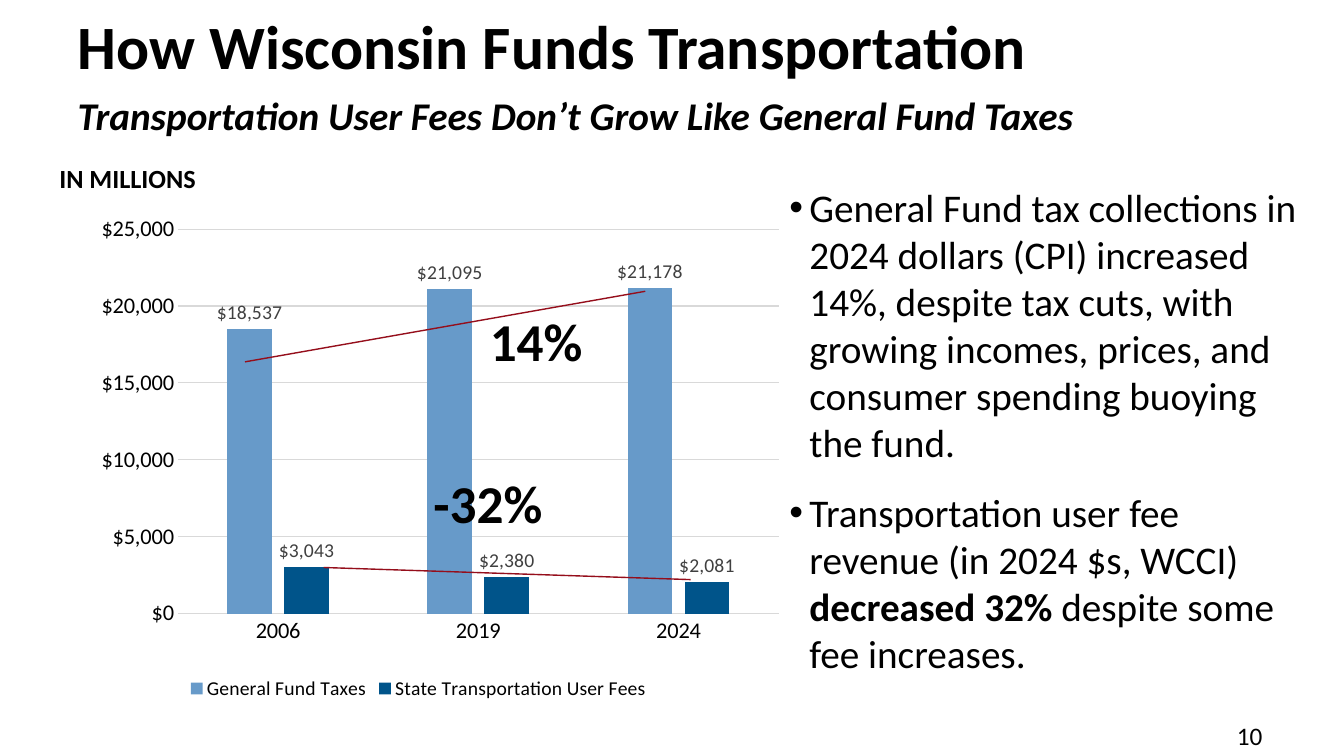
from lxml import etree
from pptx import Presentation
from pptx.chart.data import CategoryChartData
from pptx.dml.color import RGBColor
from pptx.enum.chart import XL_CHART_TYPE as ChartType
from pptx.enum.chart import XL_LABEL_POSITION as LabelPosition
from pptx.enum.chart import XL_LEGEND_POSITION as LegendPosition
from pptx.enum.chart import XL_TICK_MARK as TickMark
from pptx.enum.shapes import MSO_CONNECTOR, MSO_SHAPE
from pptx.enum.text import MSO_ANCHOR, MSO_AUTO_SIZE, PP_ALIGN
from pptx.oxml import parse_xml
from pptx.oxml.ns import nsdecls, qn
from pptx.util import Inches, Pt

FONT = "Calibri"
BLACK = RGBColor(0x00, 0x00, 0x00)
WHITE = RGBColor(0xFF, 0xFF, 0xFF)
LABEL_GRAY = RGBColor(0x40, 0x40, 0x40)
GRID_GRAY = RGBColor(0xD9, 0xD9, 0xD9)
LIGHT_BLUE = RGBColor(0x67, 0x9A, 0xC9)
DARK_BLUE = RGBColor(0x00, 0x54, 0x8A)
TREND_RED = RGBColor(0x95, 0x0E, 0x1B)

TITLE = "How Wisconsin Funds Transportation"
SUBTITLE = "Transportation User Fees Don’t Grow Like General Fund Taxes"
UNIT = "IN MILLIONS"
YEARS = ["2006", "2019", "2024"]
SERIES = [
    ("General Fund Taxes", (18537, 21095, 21178), LIGHT_BLUE),
    ("State Transportation User Fees", (3043, 2380, 2081), DARK_BLUE),
]
DOLLARS = '"$"#,##0'
PLOT_AREA = {"x": 0.167, "y": 0.053, "w": 0.832, "h": 0.766}
BULLETS = [
    [("General Fund tax collections in 2024 dollars (CPI) increased 14%, despite tax "
      "cuts, with growing incomes, prices, and consumer spending buoying the fund.", False)],
    [("Transportation user fee revenue (in 2024 $s, WCCI) ", False),
     ("decreased 32% ", True),
     ("despite some fee increases.", False)],
]
CALLOUTS = [
    ("-32%", (4.2, 4.62, 1.38, 0.74), 38, True),
    ("14%", (4.76, 3.01, 1.64, 0.74), 38, True),
    ("10", (12.17, 7.1, 1, 0.4), 18, False),
]
TREND_LINES = [(2.43, 3.59, 6.4, 2.89), (3.21, 5.63, 6.85, 5.75)]


def inches(values):
    """Convert a sequence of numbers to lengths."""
    return [Inches(value) for value in values]


def style_font(font, size, color=BLACK, bold=False, italic=False):
    """Apply the slide typeface to a font."""
    font.name = FONT
    font.size = Pt(size)
    font.color.rgb = color
    font.bold = bold
    font.italic = italic


def write_text(paragraph, text, **style):
    """Add a formatted run to a paragraph."""
    run = paragraph.add_run()
    run.text = text
    style_font(run.font, **style)


def add_text_box(slide, box):
    """Add a wrapping text box and return its text frame."""
    frame = slide.shapes.add_textbox(*inches(box)).text_frame
    frame.word_wrap = True
    frame.auto_size = MSO_AUTO_SIZE.SHAPE_TO_FIT_TEXT
    return frame


def add_title(slide):
    """Fill the title placeholder with title and subtitle."""
    title = slide.shapes.title
    title.left, title.top, title.width, title.height = inches((0.67, 0.19, 12, 1.25))
    frame = title.text_frame
    frame.auto_size = MSO_AUTO_SIZE.NONE
    frame.vertical_anchor = MSO_ANCHOR.MIDDLE
    paragraph = frame.paragraphs[0]
    paragraph.alignment = PP_ALIGN.LEFT
    paragraph.line_spacing = Pt(40)
    write_text(paragraph, TITLE, size=44, bold=True)
    paragraph.add_line_break()
    write_text(paragraph, SUBTITLE, size=28, bold=True, italic=True)


def set_plot_area(chart):
    """Fix the inner plot area as fractions of the chart."""
    plot_area = chart._chartSpace.find(f".//{qn('c:plotArea')}")
    for layout in plot_area.findall(qn("c:layout")):
        plot_area.remove(layout)
    layout = parse_xml(f"<c:layout {nsdecls('c')}><c:manualLayout/></c:layout>")
    settings = {"layoutTarget": "inner", "xMode": "edge", "yMode": "edge", **PLOT_AREA}
    for name, value in settings.items():
        etree.SubElement(layout[0], qn(f"c:{name}")).set("val", str(value))
    plot_area.insert(0, layout)


def add_revenue_chart(slide):
    """Add the clustered columns of taxes and fees."""
    data = CategoryChartData(number_format=DOLLARS)
    data.categories = YEARS
    for name, values, _ in SERIES:
        data.add_series(name, values)
    chart = slide.shapes.add_chart(
        ChartType.COLUMN_CLUSTERED, *inches((0.57, 2.01, 7.16, 4.98)), data).chart
    style_font(chart.font, 10)
    chart.has_title = False
    chart.has_legend = True
    chart.legend.position = LegendPosition.BOTTOM
    chart.legend.include_in_layout = False
    style_font(chart.legend.font, 14)

    for axis in (chart.category_axis, chart.value_axis):
        axis.major_tick_mark = axis.minor_tick_mark = TickMark.NONE
        style_font(axis.tick_labels.font, 16)
    value_axis = chart.value_axis
    value_axis.minimum_scale, value_axis.maximum_scale = 0, 25000
    value_axis.major_unit = 5000
    value_axis.tick_labels.number_format = DOLLARS
    value_axis.tick_labels.number_format_is_linked = False
    value_axis.format.line.fill.background()
    for line in (chart.category_axis.format.line, value_axis.major_gridlines.format.line):
        line.color.rgb = GRID_GRAY
        line.width = Pt(0.75)

    plot = chart.plots[0]
    plot.gap_width, plot.overlap = 219, -27
    plot.vary_by_categories = False
    for series, (_, _, color) in zip(plot.series, SERIES):
        series.format.fill.solid()
        series.format.fill.fore_color.rgb = color
        labels = series.data_labels
        labels.show_value = True
        labels.position = LabelPosition.OUTSIDE_END
        labels.number_format = DOLLARS
        labels.number_format_is_linked = False
        style_font(labels.font, 14, LABEL_GRAY)
    set_plot_area(chart)


def add_bullets(slide):
    """Add the bulleted explanation beside the chart."""
    frame = add_text_box(slide, (7.73, 1.77, 5.25, 5.04))
    for index, runs in enumerate(BULLETS):
        paragraph = frame.add_paragraph() if index else frame.paragraphs[0]
        properties = paragraph._p.get_or_add_pPr()
        properties.set("marL", str(Inches(0.2)))
        properties.set("indent", str(-Inches(0.2)))
        etree.SubElement(properties, qn("a:buFont")).set("typeface", "Arial")
        etree.SubElement(properties, qn("a:buChar")).set("char", "•")
        if index:
            paragraph.space_before = Pt(16)
        for text, bold in runs:
            write_text(paragraph, text, size=28, bold=bold)


def add_unit_label(slide):
    """Add the white label naming the chart unit."""
    shape = slide.shapes.add_shape(MSO_SHAPE.RECTANGLE, *inches((0.49, 1.56, 1.78, 0.42)))
    shape.shadow.inherit = False
    shape.fill.solid()
    shape.fill.fore_color.rgb = WHITE
    shape.line.fill.background()
    paragraph = shape.text_frame.paragraphs[0]
    paragraph.alignment = PP_ALIGN.LEFT
    write_text(paragraph, UNIT, size=18.7, bold=True)


def add_trend_line(slide, ends):
    """Add a thin red trend line."""
    connector = slide.shapes.add_connector(MSO_CONNECTOR.STRAIGHT, *inches(ends))
    connector.line.color.rgb = TREND_RED
    connector.line.width = Pt(1)
    etree.SubElement(connector._element.spPr, qn("a:effectLst"))


def main():
    """Build and save the slide."""
    presentation = Presentation()
    presentation.slide_width, presentation.slide_height = inches((13.33, 7.5))
    slide = presentation.slides.add_slide(presentation.slide_layouts[5])
    add_title(slide)
    add_revenue_chart(slide)
    for text, box, size, bold in CALLOUTS:
        write_text(add_text_box(slide, box).paragraphs[0], text, size=size, bold=bold)
    add_bullets(slide)
    add_unit_label(slide)
    for ends in TREND_LINES:
        add_trend_line(slide, ends)
    presentation.save("out.pptx")


if __name__ == "__main__":
    main()
